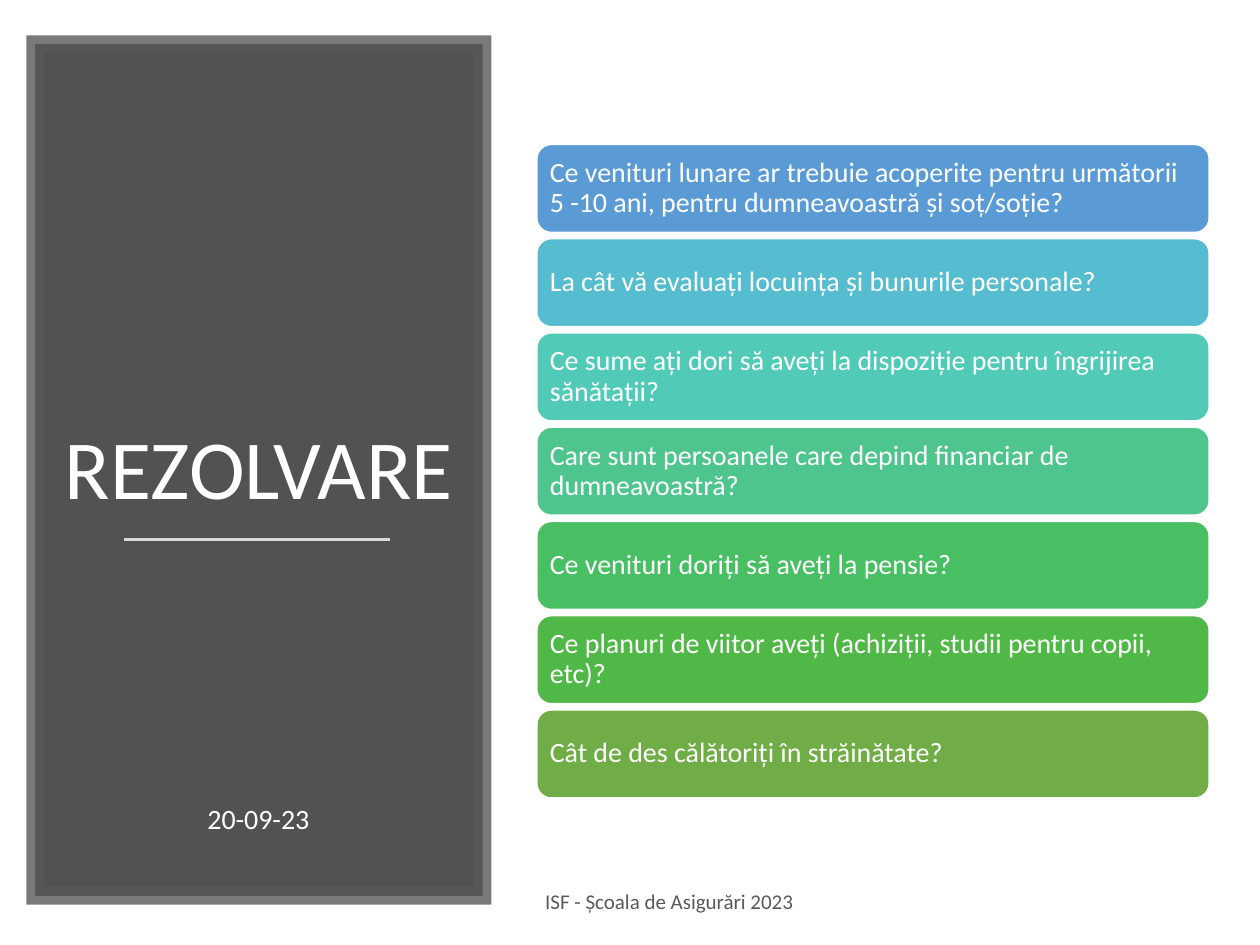
from pptx import Presentation
from pptx.dml.color import RGBColor
from pptx.enum.shapes import MSO_CONNECTOR, MSO_SHAPE
from pptx.enum.text import MSO_ANCHOR, PP_ALIGN
from pptx.oxml.ns import qn
from pptx.util import Cm, Pt
from lxml.etree import SubElement

COLORS = {
    "white": "FFFFFF",
    "panel": "404040",
    "frame": "595959",
    "rule": "D9D9D9",
}
QUESTIONS = [
    ("5B9BD5", "Ce venituri lunare ar trebuie acoperite pentru următorii 5 -10 ani, "
               "pentru dumneavoastră și soț/soție?"),
    ("56BCD0", "La cât vă evaluați locuința și bunurile personale?"),
    ("52CAB8", "Ce sume ați dori să aveți la dispoziție pentru îngrijirea sănătații?"),
    ("4DC58D", "Care sunt persoanele care depind financiar de dumneavoastră?"),
    ("49BF64", "Ce venituri doriți să aveți la pensie?"),
    ("50B846", "Ce planuri de viitor aveți (achiziții, studii pentru copii, etc)?"),
    ("70AD47", "Cât de des călătoriți în străinătate?"),
]


class SlideBuilder:
    font = "Calibri"

    def __init__(self, page):
        self.page = page

    def color(self, name):
        return RGBColor.from_string(COLORS.get(name, name))

    def shape(self, kind, area, fill, line, width):
        box = self.page.shapes.add_shape(kind, *map(Cm, area))
        box.shadow.inherit = False
        box.fill.solid()
        box.fill.fore_color.rgb = self.color(fill)
        box.line.color.rgb = self.color(line)
        box.line.width = Pt(width)
        return box

    def fill_text(self, box, text, size, color="white", align=PP_ALIGN.LEFT,
                  anchor=MSO_ANCHOR.MIDDLE, spacing=0.9):
        frame = box.text_frame
        frame.word_wrap = True
        frame.vertical_anchor = anchor
        para = frame.paragraphs[0]
        para.alignment = align
        para.line_spacing = spacing
        span = para.add_run()
        span.text = text
        span.font.name = self.font
        span.font.size = Pt(size)
        span.font.color.rgb = self.color(color)

    def text(self, area, text, size, **style):
        box = self.page.shapes.add_textbox(*map(Cm, area))
        self.fill_text(box, text, size, **style)

    def panel(self, area):
        box = self.shape(MSO_SHAPE.RECTANGLE, area, "panel", "frame", 10)
        properties = box._element.spPr
        outline = properties.find(qn("a:ln"))
        for parent, opacity in ((properties, 90), (outline, 80)):
            tint = parent.find(qn("a:solidFill")).find(qn("a:srgbClr"))
            SubElement(tint, qn("a:alpha")).set("val", str(opacity * 1000))
        SubElement(outline, qn("a:miter")).set("lim", "800000")

    def rule(self, left, right, top):
        line = self.page.shapes.add_connector(
            MSO_CONNECTOR.STRAIGHT, Cm(left), Cm(top), Cm(right), Cm(top))
        line.line.color.rgb = self.color("rule")
        line.line.width = Pt(1.75)
        SubElement(line._element.spPr, qn("a:effectLst"))

    def card(self, area, fill, text):
        box = self.shape(MSO_SHAPE.ROUNDED_RECTANGLE, area, fill, "white", 1)
        frame = box.text_frame
        frame.margin_left = frame.margin_right = Cm(0.18)
        frame.margin_top = frame.margin_bottom = Cm(0.18)
        self.fill_text(box, text, 16)


def main():
    deck = Presentation()
    deck.slide_width, deck.slide_height = Cm(25.4), Cm(19.05)
    builder = SlideBuilder(deck.slides.add_slide(deck.slide_layouts[6]))

    builder.panel((0.71, 0.89, 9.02, 17.17))
    builder.text((0.71, 2.54, 9.02, 8.03), "REZOLVARE", 48,
                 align=PP_ALIGN.CENTER, anchor=MSO_ANCHOR.BOTTOM)
    builder.rule(2.49, 7.87, 10.87)
    builder.text((1.4, 16.08, 7.62, 0.91), "20-09-23", 16, align=PP_ALIGN.CENTER)
    builder.text((10.74, 17.65, 9.63, 1.02), "ISF - Școala de Asigurări 2023", 12,
                 color="frame", spacing=1.0)
    for row, (fill, question) in enumerate(QUESTIONS):
        builder.card((10.82, 2.91 + row * 1.9, 13.56, 1.78), fill, question)

    deck.save("out.pptx")


if __name__ == "__main__":
    main()
